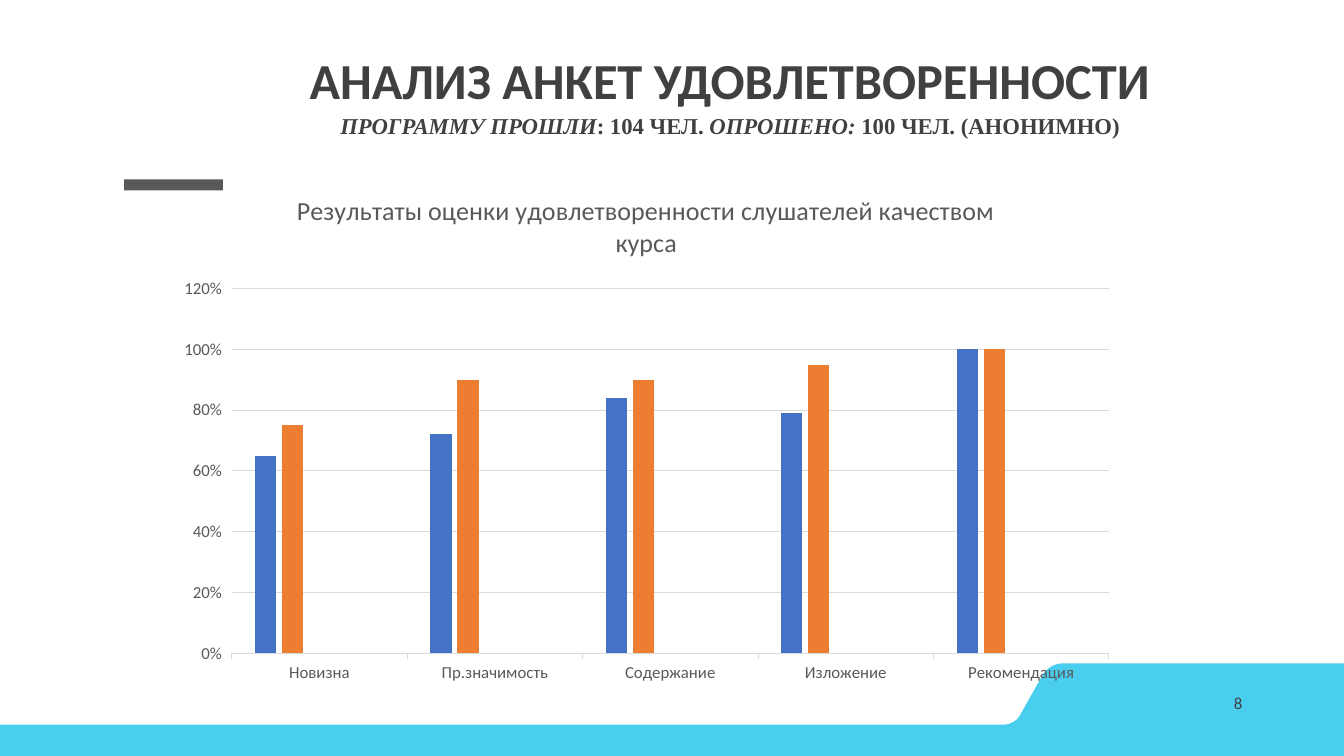
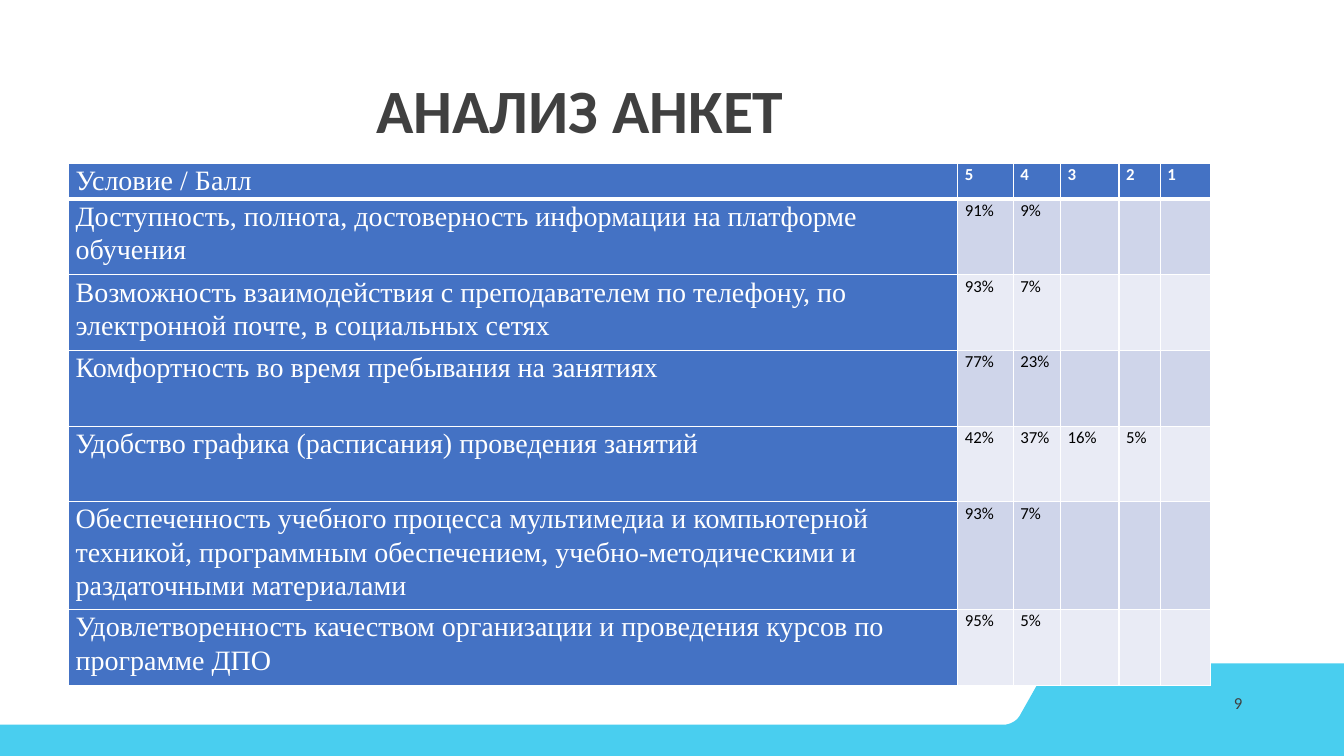
from dataclasses import dataclass

from lxml.etree import SubElement
from pptx import Presentation
from pptx.chart.data import CategoryChartData
from pptx.dml.color import RGBColor
from pptx.enum.chart import XL_CHART_TYPE, XL_TICK_MARK
from pptx.enum.shapes import MSO_SHAPE, PP_PLACEHOLDER
from pptx.enum.text import MSO_ANCHOR, MSO_AUTO_SIZE, PP_ALIGN
from pptx.oxml import parse_xml
from pptx.oxml.ns import nsdecls, qn
from pptx.util import Inches, Pt


@dataclass(frozen=True)
class Theme:
    sans: str = "Calibri"
    serif: str = "Times New Roman"
    ink: str = "404040"
    gray: str = "595959"
    grid: str = "D9D9D9"
    sky: str = "49CEEF"
    blue: str = "4472C4"
    white: str = "FFFFFF"
    black: str = "000000"
    bands: tuple = ("E9EBF5", "CFD5EA")
    series: tuple = ("4472C4", "ED7D31", "A5A5A5", "FFC000", "5B9BD5")
    small: float = 12
    sub: float = 16.2
    label: float = 18.6
    row: float = 20
    head: float = 36
    big: float = 44


look = Theme()


def style(font, color, size, **more):
    """Set colour, size in points and any other font attributes."""
    font.color.rgb = RGBColor.from_string(color)
    for name, value in {"size": Pt(size), "name": look.sans, **more}.items():
        setattr(font, name, value)


def paint(fill, color):
    fill.solid()
    fill.fore_color.rgb = RGBColor.from_string(color)


deck = Presentation()
deck.slide_width, deck.slide_height = Inches(13.33), Inches(7.5)
layout = deck.slide_layouts[5]
for holder in list(layout.placeholders):
    if holder.placeholder_format.type != PP_PLACEHOLDER.TITLE:
        holder.element.getparent().remove(holder.element)
slides = [deck.slides.add_slide(layout) for _ in range(2)]
first, second = slides

# Shared band and dash, placed on the layout
curves = [
    [(10.55, 6.58), (10.46, 6.58), (10.38, 6.63), (10.34, 6.7)],
    [(10.12, 7.09), (10.09, 7.15), (10.02, 7.19), (9.95, 7.19)],
]
steps = 12
edge = []
for a, b, c, d in curves:
    for step in range(steps + 1):
        t = step / steps
        u = 1 - t
        edge.append([
            Inches(u**3 * p + 3 * u * u * t * q + 3 * u * t * t * r + t**3 * s)
            for p, q, r, s in zip(a, b, c, d)
        ])
edge += [(Inches(x), Inches(y)) for x, y in
         [(0, 7.19), (0, 7.5), (13.33, 7.5), (13.33, 6.58)]]
pen = first.shapes.build_freeform(*edge[0])
pen.add_line_segments(edge[1:], close=True)
band = pen.convert_to_shape()
dash = first.shapes.add_shape(
    MSO_SHAPE.RECTANGLE, Inches(1.23), Inches(1.78), Inches(0.98), Inches(0.11))
for shape, color in [(band, look.sky), (dash, look.gray)]:
    paint(shape.fill, color)
    shape.line.fill.background()
    shape.shadow.inherit = False
    layout.shapes.element.append(shape.element)

# Titles: box, anchor, line spacing, then lines of (text, format) runs
note = {"size": Pt(look.sub), "name": look.serif}
titles = [
    ((2.93, 0.4, 8.62, 1.54), MSO_ANCHOR.TOP, 1.07, [
        [("АНАЛИЗ АНКЕТ УДОВЛЕТВОРЕННОСТИ", {"size": Pt(look.head)})],
        [("ПРОГРАММУ ПРОШЛИ", {**note, "italic": True}),
         (": 104 ЧЕЛ. ", note),
         ("ОПРОШЕНО: ", {**note, "italic": True}),
         ("100 ЧЕЛ. (АНОНИМНО)", note)],
    ]),
    ((2.73, 0.4, 6.05, 1.45), MSO_ANCHOR.MIDDLE, 0.9, [[("АНАЛИЗ АНКЕТ", {})]]),
]
for number, (slide, (box, anchor, space, lines)) in enumerate(zip(slides, titles), 8):
    title = slide.shapes.title
    title.left, title.top, title.width, title.height = map(Inches, box)
    frame = title.text_frame
    frame.auto_size = MSO_AUTO_SIZE.NONE
    frame.vertical_anchor = anchor
    para = frame.paragraphs[0]
    para.alignment, para.line_spacing = PP_ALIGN.CENTER, space
    for index, line in enumerate(lines):
        if index:
            para.add_line_break()
        for text, form in line:
            run = para.add_run()
            run.text = text
            style(run.font, look.ink, look.big, bold=True)
            for name, value in form.items():
                setattr(run.font, name, value)

    page = slide.shapes.add_textbox(
        Inches(9.42), Inches(6.77), Inches(3), Inches(0.4)).text_frame
    page.word_wrap = True
    page.vertical_anchor = MSO_ANCHOR.MIDDLE
    para = page.paragraphs[0]
    para.text = str(number)
    para.alignment = PP_ALIGN.RIGHT
    style(para.runs[0].font, look.ink, look.small)

# Survey chart
data = CategoryChartData(number_format="0%")
data.categories = ["Новизна", "Пр.значимость", "Содержание", "Изложение", "Рекомендация"]
scores = [[0.65, 0.72, 0.84, 0.79, 1], [0.75, 0.9, 0.9, 0.95, 1]] + [[None] * 5] * 3
for index, values in enumerate(scores, 1):
    data.add_series(f"Series {index}", values)
chart = first.shapes.add_chart(
    XL_CHART_TYPE.COLUMN_CLUSTERED,
    Inches(1.63), Inches(1.7), Inches(9.56), Inches(5.17), data).chart
style(chart.font, look.gray, look.small)
chart.has_legend = False
label = chart.chart_title.text_frame
label.text = "Результаты оценки удовлетворенности слушателей качеством курса"
style(label.paragraphs[0].runs[0].font, look.gray, look.label, bold=False)
plot = chart.plots[0]
plot.vary_by_categories = False
plot.gap_width, plot.overlap = 219, -27
for series, color in zip(plot.series, look.series):
    paint(series.format.fill, color)

across, up = chart.category_axis, chart.value_axis
for axis in (across, up):
    axis.major_tick_mark = XL_TICK_MARK.OUTSIDE
    style(axis.tick_labels.font, look.gray, look.small)
up.minimum_scale, up.maximum_scale, up.major_unit = 0, 1.2, 0.2
up.tick_labels.number_format = "0%"
up.tick_labels.number_format_is_linked = False
up.format.line.fill.background()
for line in (across.format.line, up.major_gridlines.format.line):
    paint(line.fill, look.grid)
    line.width = Pt(0.75)

area = chart.element.find(".//" + qn("c:plotArea"))
for old in area.findall(qn("c:layout")):
    area.remove(old)
place = parse_xml(f"<c:layout {nsdecls('c')}><c:manualLayout/></c:layout>")
for tag, value in {"layoutTarget": "inner", "xMode": "edge", "yMode": "edge",
                   "x": 0.07, "y": 0.225, "w": 0.91, "h": 0.7}.items():
    SubElement(place[0], qn(f"c:{tag}")).set("val", str(value))
area.insert(0, place)

# Ratings table
rows = [
    ["Условие / Балл", "5", "4", "3", "2", "1"],
    ["Доступность, полнота, достоверность информации на платформе обучения", "91%", "9%"],
    ["Возможность взаимодействия с преподавателем по телефону, по электронной почте, "
     "в социальных сетях", "93%", "7%"],
    ["Комфортность во время пребывания на занятиях", "77%", "23%"],
    ["Удобство графика (расписания) проведения занятий", "42%", "37%", "16%", "5%"],
    ["Обеспеченность учебного процесса мультимедиа и компьютерной техникой, "
     "программным обеспечением, учебно-методическими и раздаточными материалами",
     "93%", "7%"],
    ["Удовлетворенность качеством организации и проведения курсов по программе ДПО",
     "95%", "5%"],
]
widths = [8.82, 0.55, 0.47, 0.58, 0.41, 0.5]
table = second.shapes.add_table(
    len(rows), len(widths), Inches(0.68), Inches(1.62),
    Inches(sum(widths)), Inches(4.74)).table
for column, width in zip(table.columns, widths):
    column.width = Inches(width)
for r, row in enumerate(rows):
    table.rows[r].height = Inches(0.75 if r else 0.24)
    for c in range(len(widths)):
        cell = table.cell(r, c)
        cell.margin_left = cell.margin_right = Inches(0.07)
        cell.margin_top = cell.margin_bottom = 0
        props = cell._tc.get_or_add_tcPr()
        for side in "LRTB":
            heavy = (r, side) in [(0, "B"), (1, "T")]
            props.append(parse_xml(
                f'<a:ln{side} {nsdecls("a")} w="{Pt(3 if heavy else 1)}"><a:solidFill>'
                f'<a:srgbClr val="{look.white}"/></a:solidFill></a:ln{side}>'))
        dark = r == 0 or c == 0
        paint(cell.fill, look.blue if dark else look.bands[r % 2])
        if c < len(row):
            para = cell.text_frame.paragraphs[0]
            para.text = row[c]
            para.line_spacing, para.space_after = 1.07, Pt(8)
            style(para.runs[0].font, look.white if dark else look.black,
                  look.small if c else look.row,
                  name=look.sans if c else look.serif, bold=r == 0 and c > 0)

deck.save("out.pptx")
